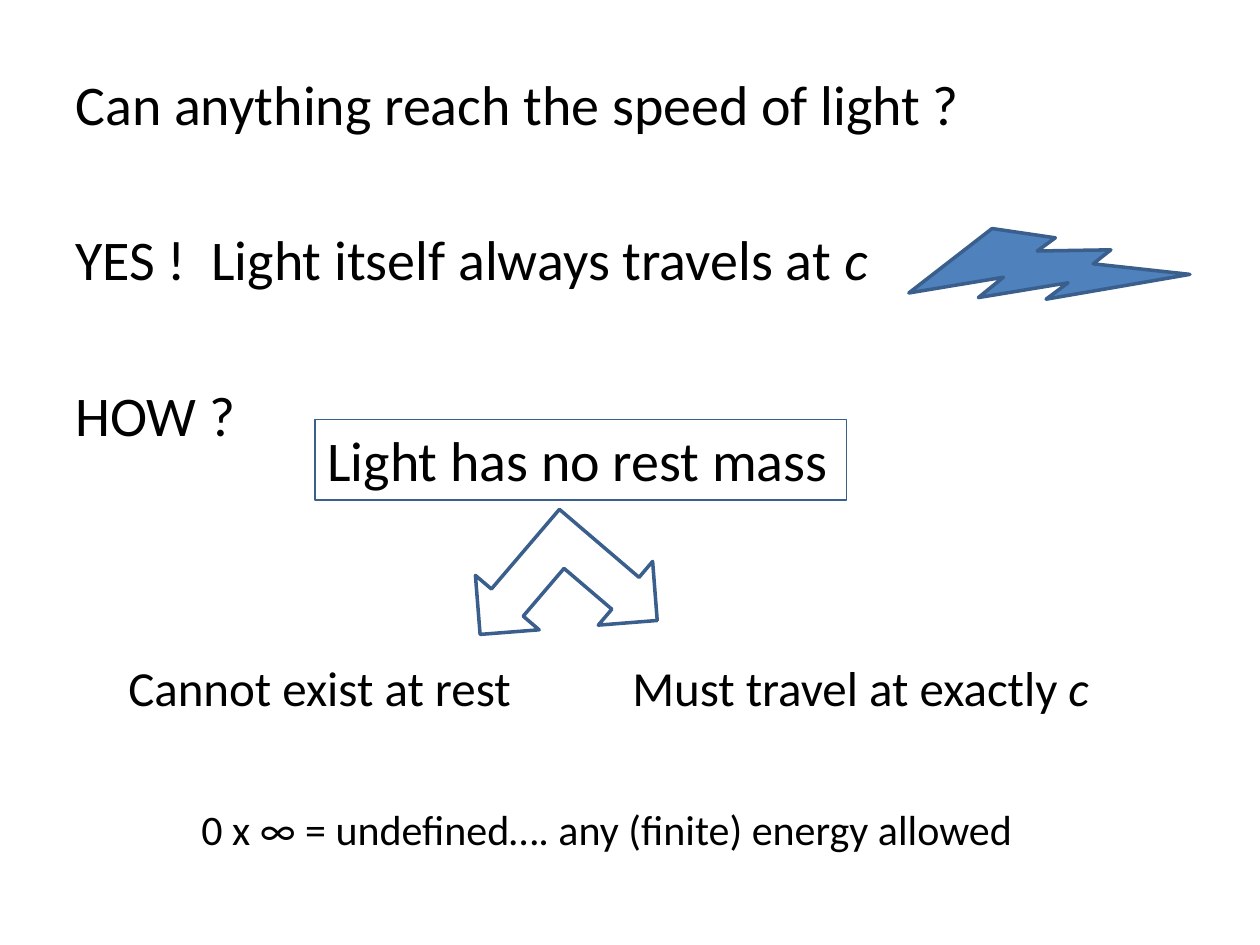
import dataclasses

import pptx
import pptx.dml.color
import pptx.enum.shapes
import pptx.enum.text
import pptx.util

Inches = pptx.util.Inches
Pt = pptx.util.Pt
RGB = pptx.dml.color.RGBColor
Shape = pptx.enum.shapes.MSO_SHAPE


@dataclasses.dataclass(frozen=True)
class Theme:
    font: str = "Calibri"
    text: RGB = RGB(0x00, 0x00, 0x00)
    fill: RGB = RGB(0x4F, 0x81, 0xBD)
    outline: RGB = RGB(0x3A, 0x5F, 0x8C)
    heading: int = 32
    consequence: int = 28
    remark: int = 24


THEME = Theme()


def write_line(paragraph, text, size, symbol=""):
    """Write one line of text, ending with an optional italic symbol."""
    paragraph.alignment = pptx.enum.text.PP_ALIGN.LEFT
    for wording, italic in ((text, False), (symbol, True)):
        if wording:
            run = paragraph.add_run()
            run.text = wording
            run.font.name = THEME.font
            run.font.size = Pt(size)
            run.font.color.rgb = THEME.text
            run.font.italic = italic


def fit_to_text(frame):
    frame.word_wrap = False
    frame.auto_size = pptx.enum.text.MSO_AUTO_SIZE.SHAPE_TO_FIT_TEXT
    frame.vertical_anchor = pptx.enum.text.MSO_ANCHOR.TOP


def add_label(slide, place, text, size, symbol=""):
    label = slide.shapes.add_textbox(*map(Inches, place))
    fit_to_text(label.text_frame)
    write_line(label.text_frame.paragraphs[0], text, size, symbol)


def add_questions(slide, place, lines):
    frame = slide.shapes.add_textbox(*map(Inches, place)).text_frame
    frame.word_wrap = True
    for index, (text, symbol) in enumerate(lines):
        paragraph = frame.add_paragraph() if index else frame.paragraphs[0]
        paragraph.space_after = Pt(50.5)
        write_line(paragraph, text, THEME.heading, symbol)


def add_outlined(slide, kind, place, width, rotation=0, fill=None):
    shape = slide.shapes.add_shape(kind, *map(Inches, place))
    shape.shadow.inherit = False
    shape.rotation = rotation
    shape.line.color.rgb = THEME.outline
    shape.line.width = Pt(width)
    if fill is None:
        shape.fill.background()
    else:
        shape.fill.solid()
        shape.fill.fore_color.rgb = fill
    return shape


def main():
    deck = pptx.Presentation()
    deck.slide_width, deck.slide_height = Inches(10), Inches(7.5)
    slide = deck.slides.add_slide(deck.slide_layouts[6])

    add_questions(slide, (0.5, 0.5, 9, 6.2), [
        ("Can anything reach the speed of light ?", ""),
        ("YES !  Light itself always travels at ", "c"),
        ("HOW ?", ""),
    ])

    answer = add_outlined(slide, Shape.RECTANGLE, (2.5, 3.33, 4.22, 0.64), 0.75)
    fit_to_text(answer.text_frame)
    write_line(answer.text_frame.paragraphs[0], "Light has no rest mass", THEME.heading)

    add_outlined(slide, Shape.LEFT_UP_ARROW, (3.83, 4.08, 1.33, 1.33), 2, rotation=220.5)
    add_label(slide, (0.92, 5.17, 3.27, 0.57), "Cannot exist at rest", THEME.consequence)
    add_label(slide, (4.92, 5.17, 3.87, 0.57), "Must travel at exactly ",
              THEME.consequence, "c")
    add_outlined(slide, Shape.LIGHTNING_BOLT, (7.25, 1.67, 2.08, 1), 2,
                 rotation=334.7, fill=THEME.fill)
    add_label(slide, (1.5, 6.33, 6.7, 0.5),
              "0 x ∞ = undefined…. any (finite) energy allowed", THEME.remark)

    deck.save("out.pptx")


if __name__ == "__main__":
    main()
